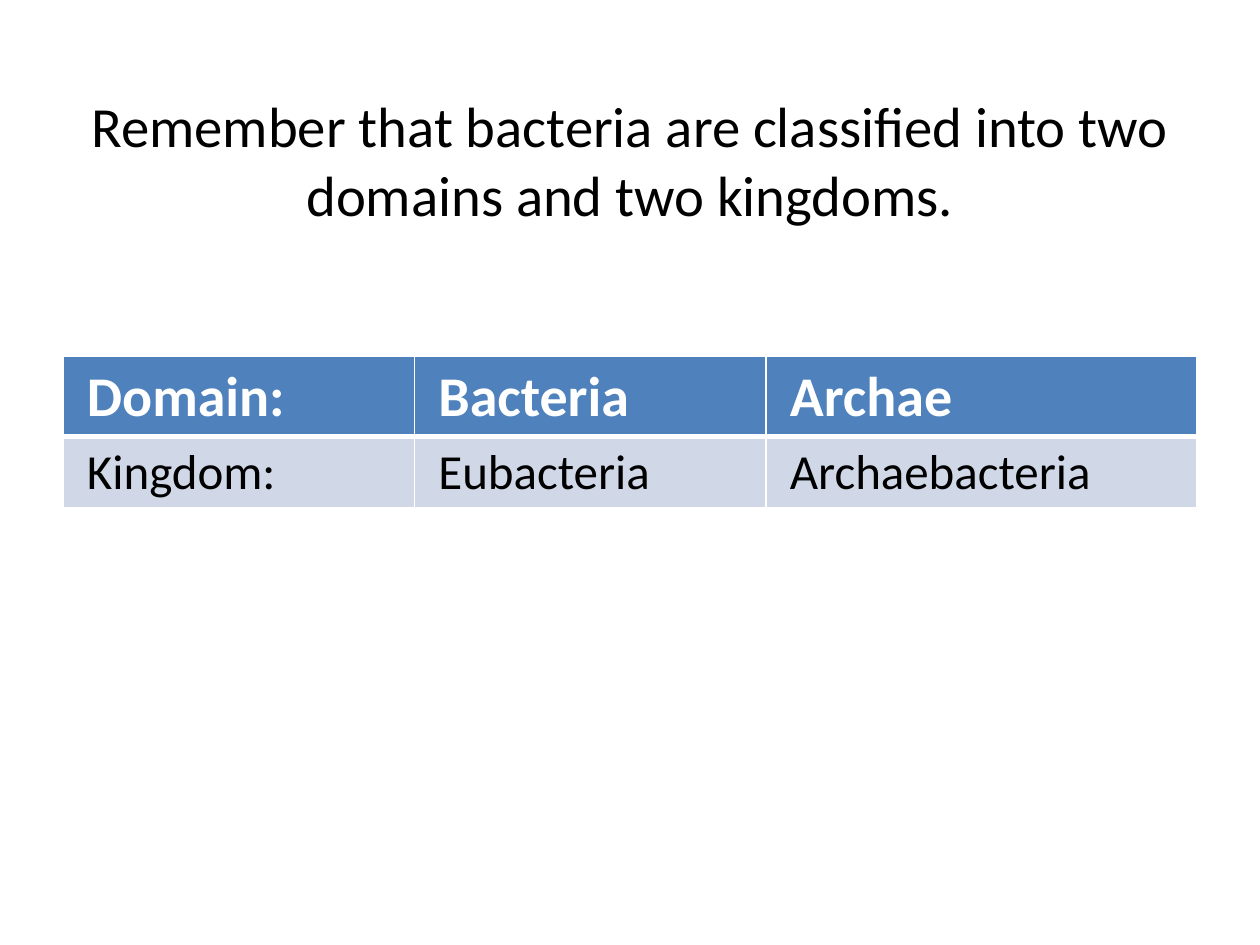
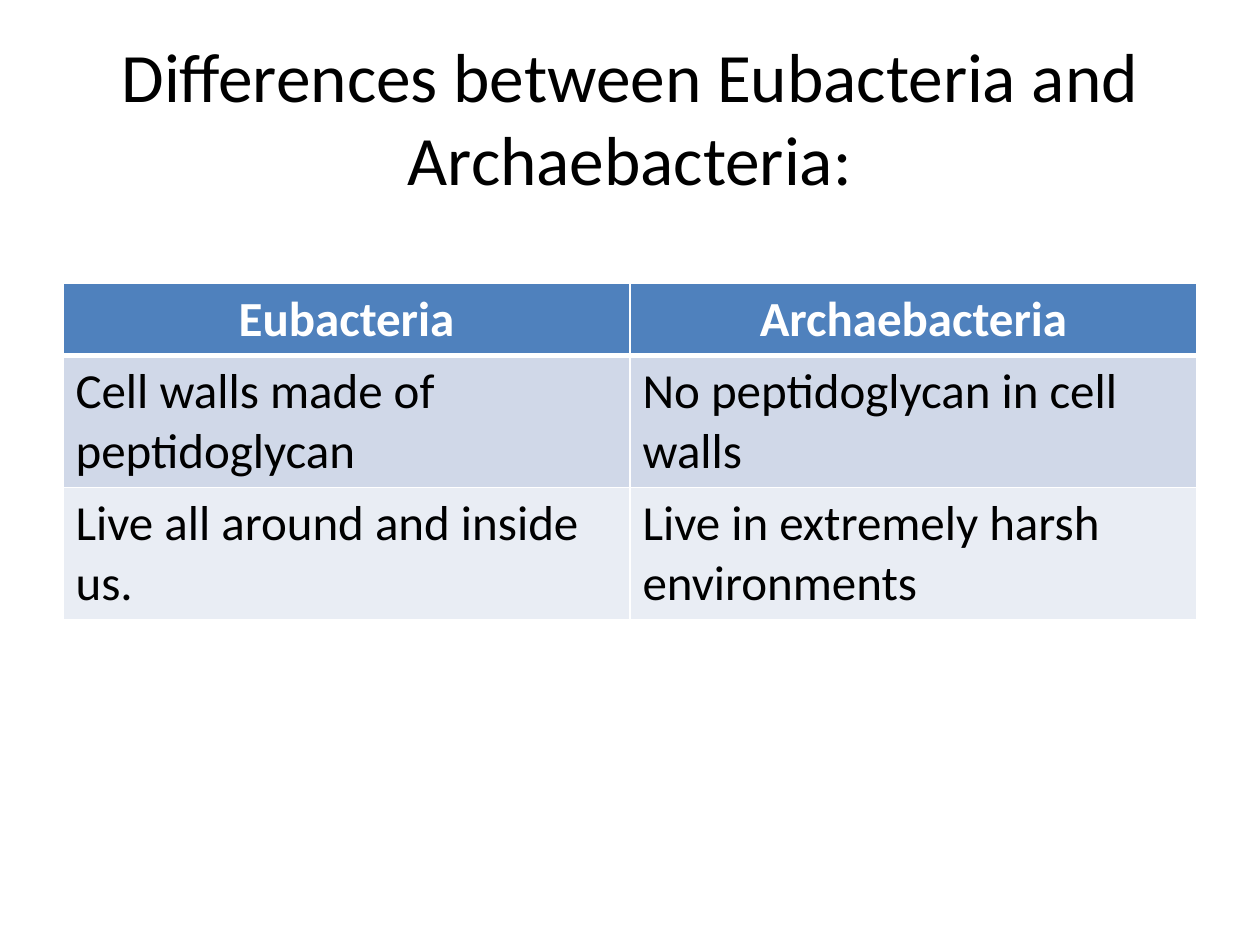
from lxml.etree import SubElement
from pptx import Presentation
from pptx.dml.color import RGBColor
from pptx.enum.text import MSO_ANCHOR, PP_ALIGN
from pptx.oxml.ns import qn
from pptx.util import Inches, Pt

# Content
SLIDES = [
    {
        "title": "Remember that bacteria are classified into two domains and two kingdoms.",
        "title_top": 1.08, "title_height": 0.92, "title_size": 32.4,
        "title_lift": 0.55,
        "table_top": 2.83, "column_shares": (0.31, 0.31, 0.38),
        "row_heights": (0.63, 0.57), "side_margin": 0.19,
        "header_size": 32, "header_align": PP_ALIGN.LEFT,
        "rows": [
            ("Domain:", "Bacteria", "Archae"),
            ("Kingdom:", "Eubacteria", "Archaebacteria"),
        ],
    },
    {
        "title": "Differences between Eubacteria and Archaebacteria:",
        "title_top": 0.3, "title_height": 1.25, "title_size": 39.6,
        "title_lift": 0,
        "table_top": 2.25, "column_shares": (0.5, 0.5),
        "row_heights": (0.57, 1.05, 1.05), "side_margin": 0.1,
        "header_size": 28, "header_align": PP_ALIGN.CENTER,
        "rows": [
            ("Eubacteria", "Archaebacteria"),
            ("Cell walls made of peptidoglycan", "No peptidoglycan in cell walls"),
            ("Live all around and inside us.", "Live in extremely harsh environments"),
        ],
    },
]

# Shared style
FONT = "Calibri"
BLACK = RGBColor(0x00, 0x00, 0x00)
WHITE = RGBColor(0xFF, 0xFF, 0xFF)
HEADER_BLUE = RGBColor(0x4F, 0x81, 0xBD)
BANDS = (RGBColor(0xD0, 0xD8, 0xE8), RGBColor(0xE9, 0xED, 0xF4))
BODY_SIZE = 28
SLIDE_WIDTH, SLIDE_HEIGHT = 10, 7.5
MARGIN = 0.05 * SLIDE_WIDTH
CONTENT_WIDTH = SLIDE_WIDTH - 2 * MARGIN
THIN, THICK = 1, 3


def write(text_frame, text, size, color, align, bold=False):
    paragraph = text_frame.paragraphs[0]
    paragraph.alignment = align
    run = paragraph.add_run()
    run.text = text
    run.font.name = FONT
    run.font.size = Pt(size)
    run.font.bold = bold
    run.font.color.rgb = color


def add_title(slide, content):
    box = slide.shapes.add_textbox(
        Inches(MARGIN), Inches(content["title_top"]),
        Inches(CONTENT_WIDTH), Inches(content["title_height"]))
    frame = box.text_frame
    frame.word_wrap = True
    frame.vertical_anchor = MSO_ANCHOR.MIDDLE
    frame.margin_bottom = Inches(0.05 + content["title_lift"])
    write(frame, content["title"], content["title_size"], BLACK, PP_ALIGN.CENTER)


def set_borders(cell, row):
    """White rules, with a thick one between the header and the body."""
    widths = {
        "a:lnL": THIN,
        "a:lnR": THIN,
        "a:lnT": THICK if row == 1 else THIN,
        "a:lnB": THICK if row == 0 else THIN,
    }
    properties = cell._tc.get_or_add_tcPr()
    for position, (side, width) in enumerate(widths.items()):
        line = SubElement(properties, qn(side), w=str(Pt(width)))
        fill = SubElement(line, qn("a:solidFill"))
        SubElement(fill, qn("a:srgbClr"), val=str(WHITE))
        properties.insert(position, line)


def add_table(slide, content):
    rows, heights = content["rows"], content["row_heights"]
    table = slide.shapes.add_table(
        len(rows), len(rows[0]), Inches(MARGIN), Inches(content["table_top"]),
        Inches(CONTENT_WIDTH), Inches(sum(heights))).table
    for column, share in zip(table.columns, content["column_shares"]):
        column.width = Inches(CONTENT_WIDTH * share)
    for row, (texts, height) in enumerate(zip(rows, heights)):
        table.rows[row].height = Inches(height)
        header = row == 0
        for column, text in enumerate(texts):
            cell = table.cell(row, column)
            cell.margin_left = cell.margin_right = Inches(content["side_margin"])
            cell.fill.solid()
            cell.fill.fore_color.rgb = HEADER_BLUE if header else BANDS[(row - 1) % 2]
            set_borders(cell, row)
            if header:
                write(cell.text_frame, text, content["header_size"], WHITE,
                      content["header_align"], bold=True)
            else:
                write(cell.text_frame, text, BODY_SIZE, BLACK, PP_ALIGN.LEFT)


def main():
    presentation = Presentation()
    presentation.slide_width = Inches(SLIDE_WIDTH)
    presentation.slide_height = Inches(SLIDE_HEIGHT)
    blank_layout = presentation.slide_layouts[6]
    for content in SLIDES:
        slide = presentation.slides.add_slide(blank_layout)
        add_title(slide, content)
        add_table(slide, content)
    presentation.save("out.pptx")


if __name__ == "__main__":
    main()
